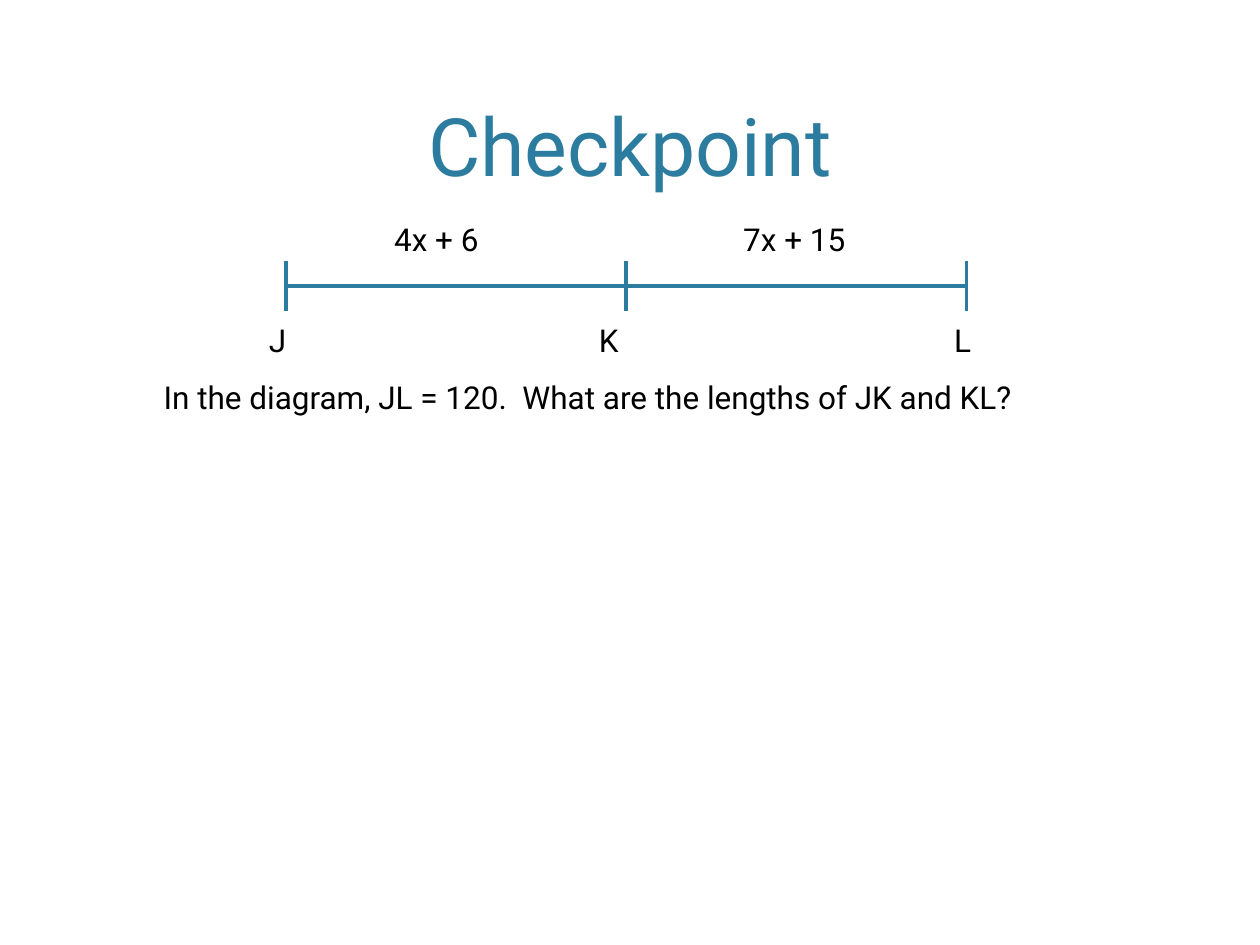
from lxml.etree import SubElement
from pptx import Presentation
from pptx.dml.color import RGBColor
from pptx.enum.shapes import MSO_CONNECTOR
from pptx.enum.text import MSO_ANCHOR, PP_ALIGN
from pptx.oxml.ns import qn
from pptx.util import Pt

TEAL = "2C7C9F"
BLACK = "000000"


def color(value):
    return RGBColor.from_string(value)


def add_text(page, text, bounds, size=18, tint=BLACK, align=PP_ALIGN.LEFT, anchor=MSO_ANCHOR.TOP):
    box = page.shapes.add_textbox(*map(Pt, bounds))
    frame = box.text_frame
    for name, value in {"word_wrap": True, "vertical_anchor": anchor}.items():
        setattr(frame, name, value)
    para = frame.paragraphs[0]
    para.alignment = align
    span = para.add_run()
    span.text = text
    for name, value in {"name": "Roboto", "size": Pt(size)}.items():
        setattr(span.font, name, value)
    span.font.color.rgb = color(tint)
    return para


deck = Presentation()
deck.slide_width, deck.slide_height = Pt(720), Pt(540)
page = deck.slides.add_slide(deck.slide_layouts[6])

add_text(page, "Checkpoint", (43.2, 8.64, 633.6, 105.12), 46, TEAL, PP_ALIGN.CENTER, MSO_ANCHOR.BOTTOM)

start, half, axis, tick = 163.44, 194.4, 163.44, 14.4
strokes = [(start, axis, start + 2 * half, axis)]
for index in range(3):
    x = start + index * half
    strokes.append((x, axis - tick, x, axis + tick))
for stroke in strokes:
    line = page.shapes.add_connector(MSO_CONNECTOR.STRAIGHT, *map(Pt, stroke))
    line.line.width = Pt(2)
    line.line.color.rgb = color(TEAL)
    SubElement(line._element.spPr, qn("a:effectLst"))

for text, left in (("4x + 6", 218.16), ("7x + 15", 417.6)):
    add_text(page, text, (left, 122.4, 88.56, 28.8))

points = add_text(page, "\tJ\tK\tL", (129.6, 180, 455.76, 28.8))
stops = SubElement(points._p.get_or_add_pPr(), qn("a:tabLst"))
for position in (17, 205.5, 408.5):
    SubElement(stops, qn("a:tab"), pos=str(Pt(position)), algn="l")

add_text(page, "In the diagram, JL = 120.  What are the lengths of JK and KL?", (86.4, 212.4, 560.16, 28.8))

deck.save("out.pptx")
